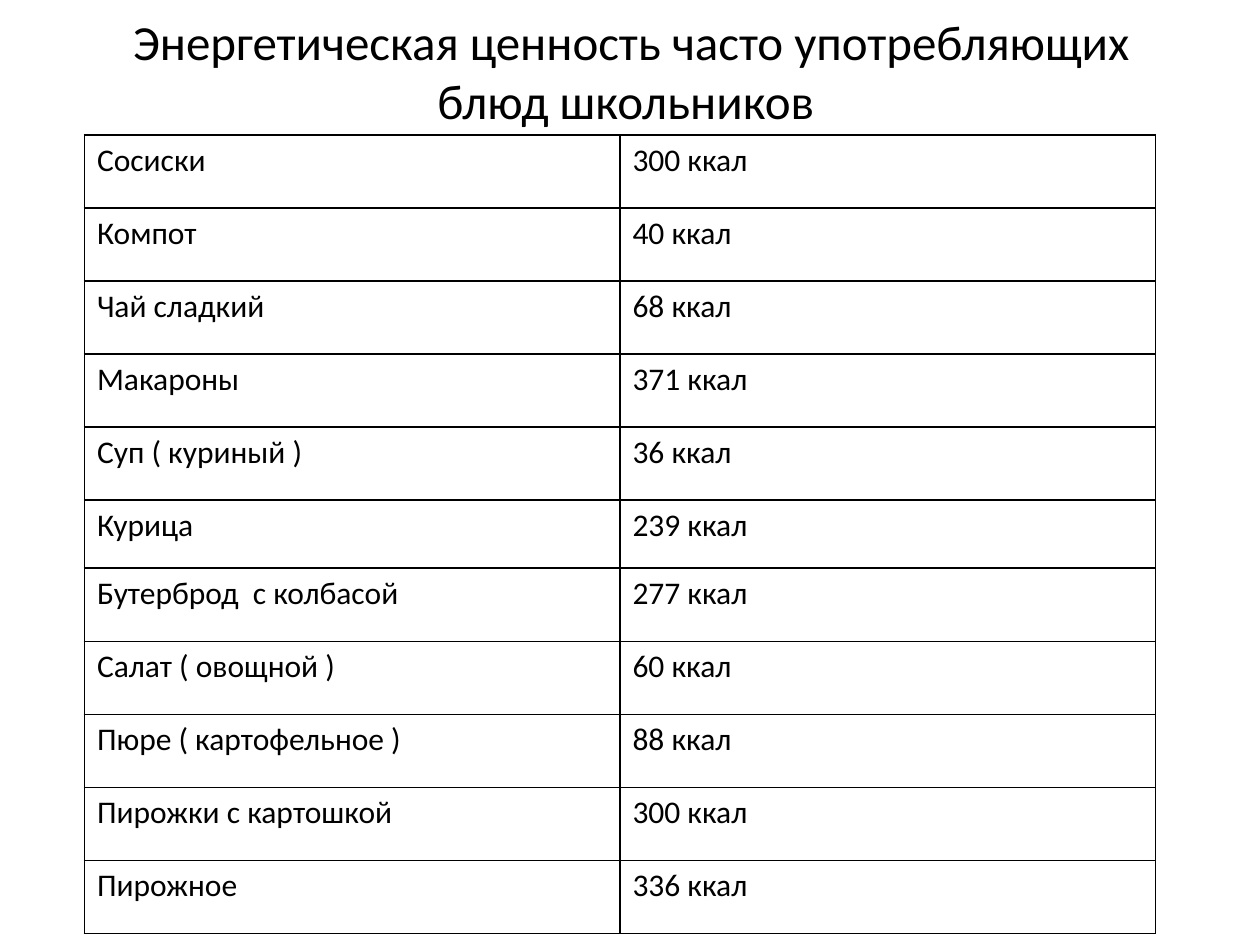
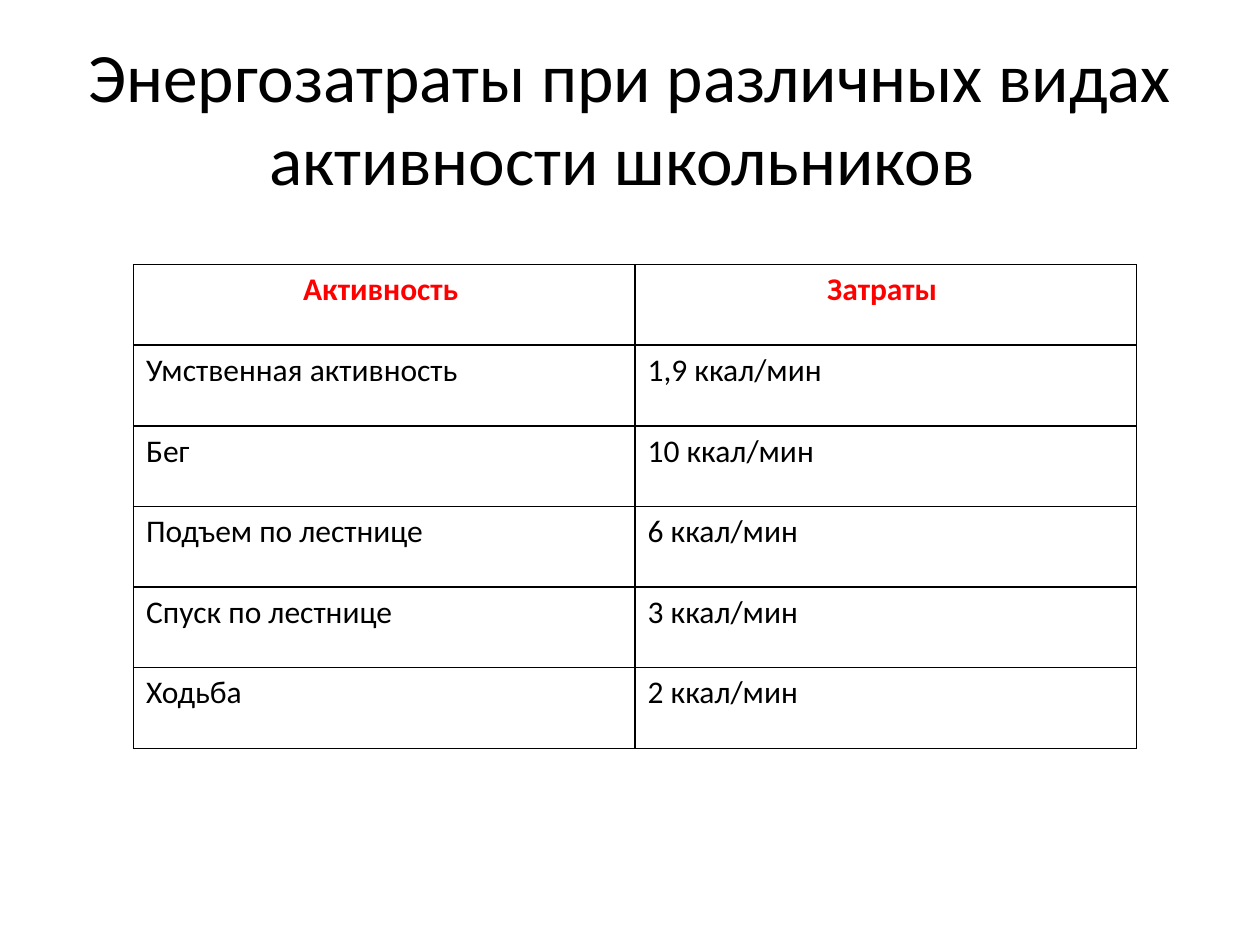
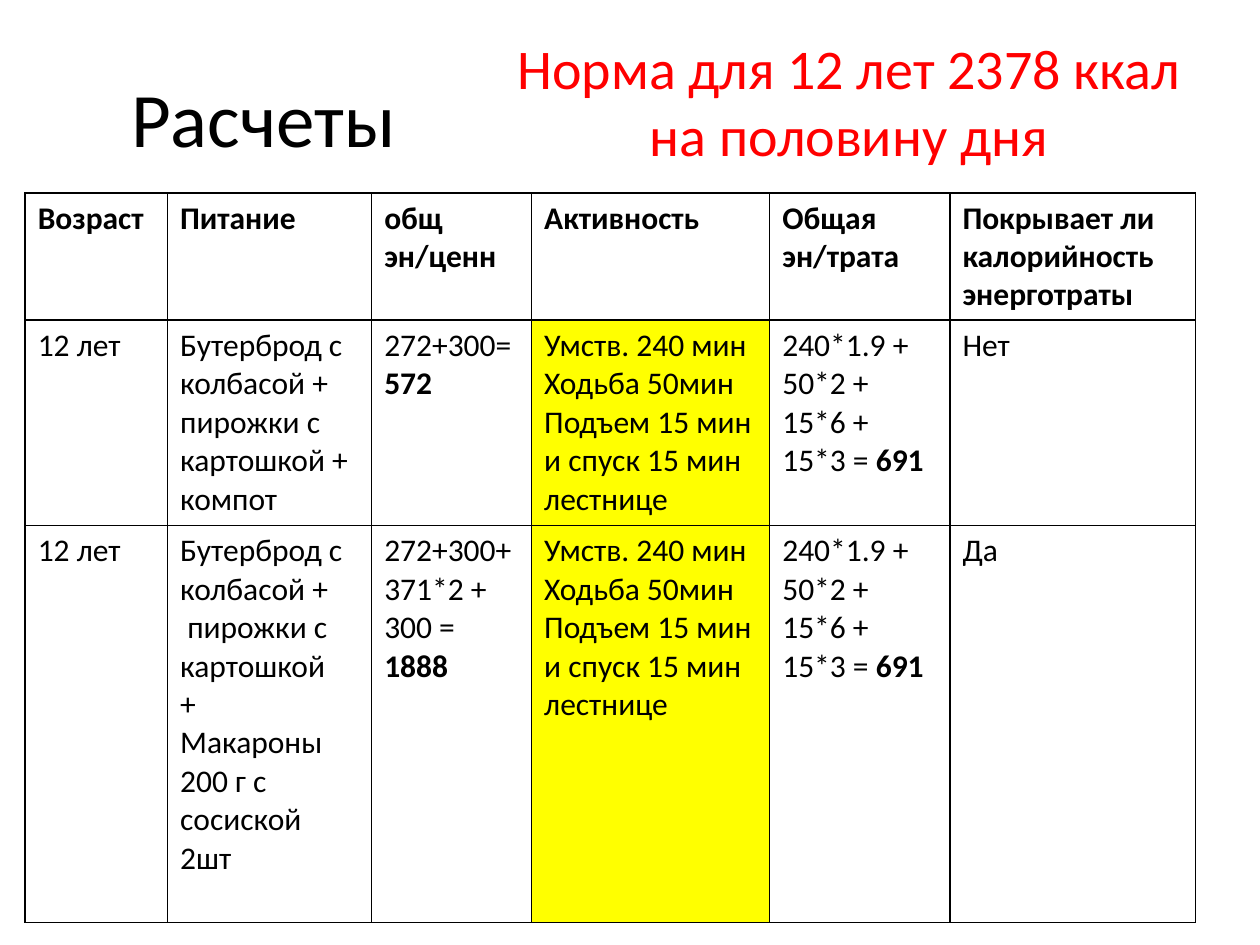
from lxml import etree
from pptx import Presentation
from pptx import util as u
from pptx.dml.color import RGBColor
from pptx.enum import text
from pptx.oxml import ns

HUES = {"ink": "000000", "paper": "FFFFFF", "alert": "FF0000", "mark": "FFFF00"}
FONT = "Calibri"
BODY = 18

FOOD = [
    ("Сосиски", 300), ("Компот", 40), ("Чай сладкий", 68), ("Макароны", 371),
    ("Суп ( куриный )", 36), ("Курица", 239), ("Бутерброд  с колбасой", 277),
    ("Салат ( овощной )", 60), ("Пюре ( картофельное )", 88),
    ("Пирожки с картошкой", 300), ("Пирожное", 336),
]
MOVES = [
    ("Умственная активность", "1,9"), ("Бег", "10"), ("Подъем по лестнице", "6"),
    ("Спуск по лестнице", "3"), ("Ходьба", "2"),
]
HEADS = ["Возраст", "Питание", "общ эн/ценн", "Активность", "Общая эн/трата",
         "Покрывает ли калорийность энерготраты"]
AGE = "12 лет"
DAY = "Умств. 240 мин\nХодьба 50мин\nПодъем 15 мин и спуск 15 мин лестнице"
SPENT = "240*1.9 + 50*2 + 15*6 + 15*3 = |691"
CASES = [
    [AGE, "Бутерброд с колбасой + пирожки с картошкой + компот",
     "272+300= |572", DAY, SPENT, "Нет"],
    [AGE, "Бутерброд с колбасой +\n пирожки с картошкой\n+\nМакароны 200 г с сосиской 2шт",
     "272+300+371*2 +\n300 = |1888", DAY, SPENT, "Да"],
]


def tint(hue):
    return RGBColor.from_string(HUES[hue])


def style(run, size, hue="ink", bold=False):
    font = run.font
    font.name, font.size, font.bold = FONT, u.Pt(size), bold
    font.color.rgb = tint(hue)


def title(slide, box, words, size, hue="ink", wrap=True):
    frame = slide.shapes.add_textbox(*map(u.Inches, box)).text_frame
    frame.word_wrap = wrap
    frame.vertical_anchor = text.MSO_ANCHOR.MIDDLE
    frame.text = words
    for para in frame.paragraphs:
        para.alignment = text.PP_ALIGN.CENTER
        for run in para.runs:
            style(run, size, hue)


def border(cell):
    props = cell._tc.get_or_add_tcPr()
    for side in "LRTB":
        line = etree.SubElement(props, ns.qn(f"a:ln{side}"), w=str(u.Pt(1)))
        fill = etree.SubElement(line, ns.qn("a:solidFill"))
        etree.SubElement(fill, ns.qn("a:srgbClr"), val=HUES["ink"])


def write(cell, words, hue="ink", bold=False, center=False):
    lines = [line.partition("|") for line in words.split("\n")]
    cell.text_frame.text = "\n".join(plain for plain, _, _ in lines)
    for para, (_, _, total) in zip(cell.text_frame.paragraphs, lines):
        if center:
            para.alignment = text.PP_ALIGN.CENTER
        for run in para.runs:
            style(run, BODY, hue, bold)
        if total:
            run = para.add_run()
            run.text = total
            style(run, BODY, hue, True)


def grid(slide, spot, cols, rows, data, head=None, mark=None):
    box = (*spot, sum(cols), sum(rows))
    table = slide.shapes.add_table(len(rows), len(cols), *map(u.Inches, box)).table
    table.first_row = table.horz_banding = False
    for col, width in zip(table.columns, cols):
        col.width = u.Inches(width)
    for row, height in zip(table.rows, rows):
        row.height = u.Inches(height)
    for r, line in enumerate(data):
        for c, words in enumerate(line):
            cell = table.cell(r, c)
            border(cell)
            cell.fill.solid()
            cell.fill.fore_color.rgb = tint("mark" if r and c == mark else "paper")
            write(cell, words, **(head if head and r == 0 else {}))


def foods(slide):
    title(slide, (0.51, 0.05, 9, 1.02),
          "Энергетическая ценность часто употребляющих\vблюд школьников ", 28)
    rows = [0.54 if name == "Курица" else 0.58 for name, _ in FOOD]
    grid(slide, (0.67, 1.07), [4.25] * 2, rows,
         [(name, f"{kcal} ккал") for name, kcal in FOOD])


def moves(slide):
    title(slide, (0.5, 0.3, 9, 1.25),
          "Энергозатраты при различных видах активности школьников ", 39.6)
    data = [("Активность ", "Затраты ")]
    data += [(name, f"{rate} ккал/мин") for name, rate in MOVES]
    grid(slide, (1.06, 2.1), [3.98] * 2, [0.64] * len(data), data,
         head={"hue": "alert", "bold": True, "center": True})


def sums(slide):
    title(slide, (0.5, 0.3, 3.32, 1.25), "Расчеты ", 44)
    grid(slide, (0.2, 1.53), [1.13, 1.62, 1.27, 1.89, 1.43, 1.95],
         [1.01, 1.63, 3.15], [HEADS] + CASES, head={"bold": True}, mark=3)
    title(slide, (3.98, 0.21, 5.62, 1.18),
          "Норма для 12 лет 2378 ккал \nна половину дня ", 32, "alert", False)


def main():
    deck = Presentation()
    deck.slide_width, deck.slide_height = u.Inches(10), u.Inches(7.5)
    for build in (foods, moves, sums):
        build(deck.slides.add_slide(deck.slide_layouts[6]))
    deck.save("out.pptx")


if __name__ == "__main__":
    main()
